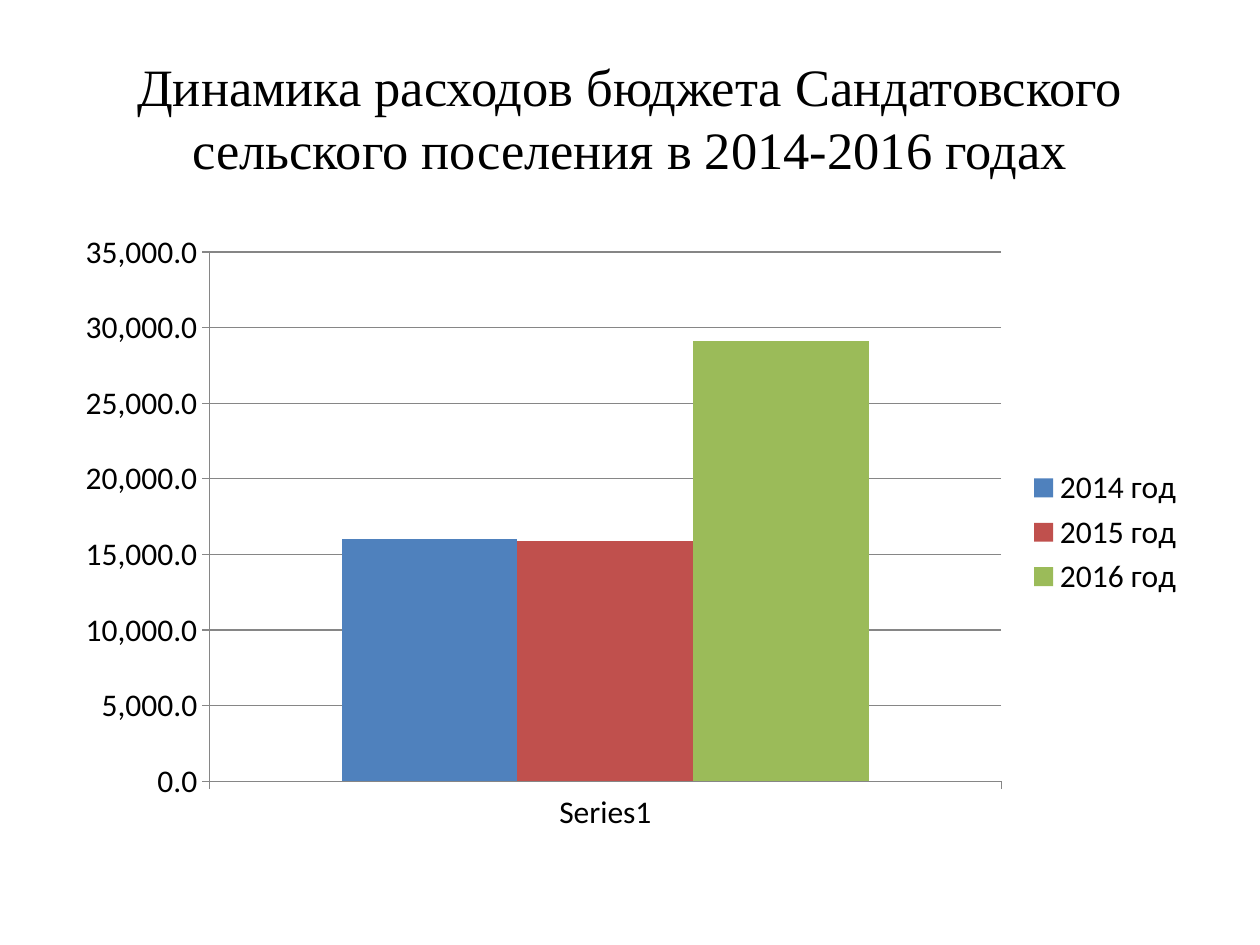
from dataclasses import dataclass

import pptx
import pptx.chart.data
import pptx.dml.color
import pptx.enum.chart
import pptx.enum.text
import pptx.util

Inches = pptx.util.Inches


@dataclass(frozen=True)
class Theme:
    title_font: str = "Times New Roman"
    chart_font: str = "Calibri"
    title_size: int = 30
    chart_size: int = 18
    text: str = "000000"
    axis: str = "868686"
    years: tuple = ("4F81BD", "C0504D", "9BBB59")


def rgb(value):
    return pptx.dml.color.RGBColor.from_string(value)


def style_font(font, name, size, color):
    font.name = name
    font.size = pptx.util.Pt(size)
    font.color.rgb = rgb(color)


def write_text(frame, text, *, font, size, color, align, anchor):
    frame.word_wrap = True
    frame.auto_size = pptx.enum.text.MSO_AUTO_SIZE.NONE
    frame.vertical_anchor = anchor
    paragraph = frame.paragraphs[0]
    paragraph.alignment = align
    run = paragraph.add_run()
    run.text = text
    style_font(run.font, font, size, color)


class SlideBuilder:
    """Holds the theme and the slide being filled."""

    def __init__(self, slide, theme):
        self.slide = slide
        self.theme = theme

    def title(self, text, left, top, width, height):
        heading = self.slide.shapes.title
        heading.left, heading.top = Inches(left), Inches(top)
        heading.width, heading.height = Inches(width), Inches(height)
        write_text(
            heading.text_frame, text,
            font=self.theme.title_font, size=self.theme.title_size,
            color=self.theme.text,
            align=pptx.enum.text.PP_ALIGN.CENTER,
            anchor=pptx.enum.text.MSO_ANCHOR.MIDDLE,
        )

    def column_chart(self, category, spending, left, top, width, height):
        """Draw one column per year, each year being its own series."""
        data = pptx.chart.data.CategoryChartData()
        data.categories = [category]
        for year, amount in spending.items():
            data.add_series(year, [amount])
        chart = self.slide.shapes.add_chart(
            pptx.enum.chart.XL_CHART_TYPE.COLUMN_CLUSTERED,
            Inches(left), Inches(top), Inches(width), Inches(height), data,
        ).chart
        chart.has_title = False
        style_font(chart.font, self.theme.chart_font, self.theme.chart_size,
                   self.theme.text)
        chart.has_legend = True
        chart.legend.position = pptx.enum.chart.XL_LEGEND_POSITION.RIGHT
        chart.legend.include_in_layout = False

        plot = chart.plots[0]
        plot.gap_width = 150
        plot.overlap = 0
        plot.vary_by_categories = False
        for series, color in zip(plot.series, self.theme.years):
            series.invert_if_negative = False
            series.format.fill.solid()
            series.format.fill.fore_color.rgb = rgb(color)

        amounts = chart.value_axis
        amounts.has_major_gridlines = True
        amounts.tick_labels.number_format = "#,##0.0"
        amounts.tick_labels.number_format_is_linked = False
        for axis in (chart.category_axis, amounts):
            axis.major_tick_mark = pptx.enum.chart.XL_TICK_MARK.OUTSIDE
            axis.minor_tick_mark = pptx.enum.chart.XL_TICK_MARK.NONE
        for part in (chart.category_axis, amounts, amounts.major_gridlines):
            part.format.line.color.rgb = rgb(self.theme.axis)
            part.format.line.width = pptx.util.Pt(0.75)


def main():
    deck = pptx.Presentation()
    deck.slide_width, deck.slide_height = Inches(10), Inches(7.5)
    title_only = deck.slide_layouts.get_by_name("Title Only")
    page = SlideBuilder(deck.slides.add_slide(title_only), Theme())
    page.title(
        "Динамика расходов бюджета Сандатовского "
        "сельского поселения в 2014-2016 годах",
        0.5, 0.3, 9, 1.25,
    )
    spending = {"2014 год": 16000, "2015 год": 15900, "2016 год": 29100}
    page.column_chart("Series1", spending, 0.5, 1.75, 9, 4.95)
    deck.save("out.pptx")


if __name__ == "__main__":
    main()
